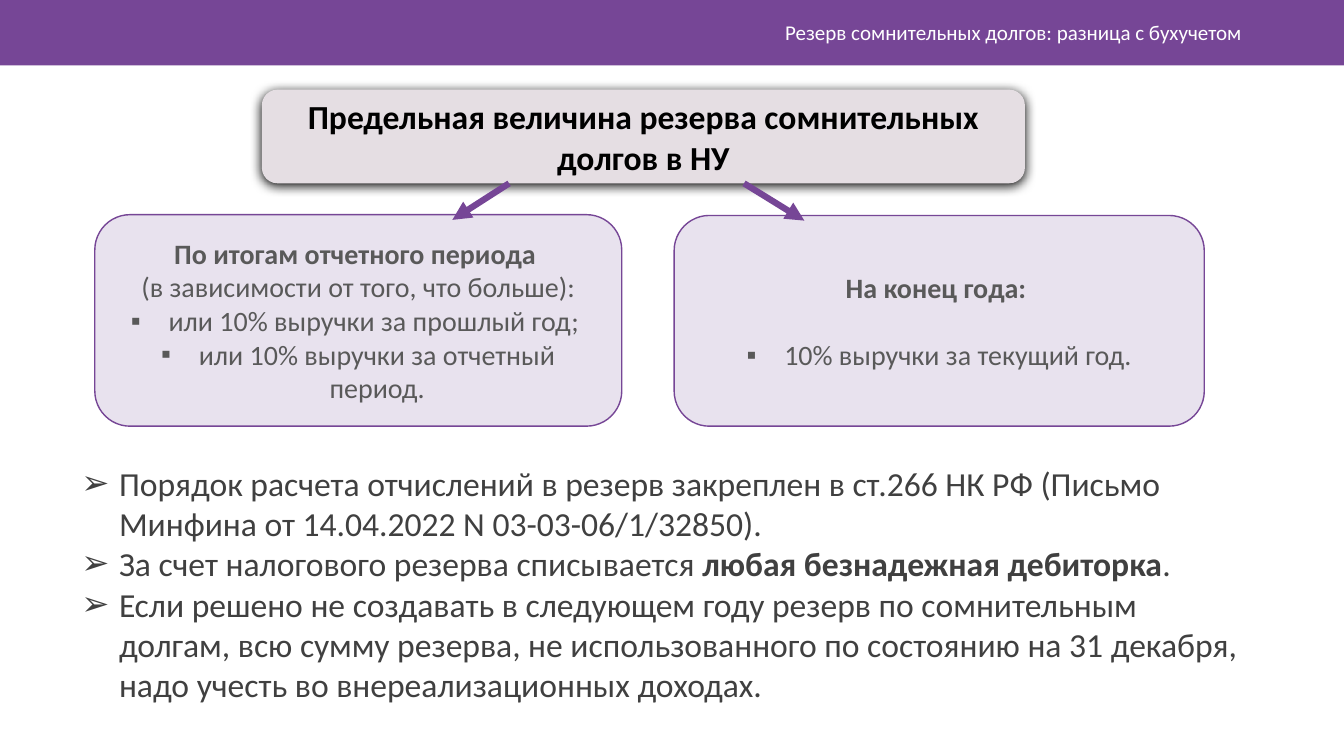
from lxml.etree import SubElement
from pptx import Presentation
from pptx.dml.color import RGBColor
from pptx.enum.shapes import MSO_CONNECTOR as CONN, MSO_SHAPE as SHAPE
from pptx.enum.text import MSO_ANCHOR as ANCHOR, PP_ALIGN as ALIGN
from pptx.oxml.ns import qn
from pptx.util import Cm, Pt

PURPLE = RGBColor(0x76, 0x46, 0x96)
LILAC = RGBColor(0xE8, 0xE2, 0xEE)
PINK_GREY = RGBColor(0xE5, 0xDE, 0xE3)
WHITE = RGBColor(0xFF, 0xFF, 0xFF)
BLACK = RGBColor(0, 0, 0)
DARK_GREY = RGBColor(0x40, 0x40, 0x40)
GREY = RGBColor(0x59, 0x59, 0x59)
INDENT = Cm(0.95)


def add_text(tf, *runs, size, color, align=ALIGN.LEFT, bold=False, bullet=None, before=0):
    """Append a paragraph; every second run has the opposite weight."""
    p = tf.paragraphs[0]
    if p.runs:
        p = tf.add_paragraph()
    p.alignment = align
    if bullet:
        pPr = p._p.get_or_add_pPr()
        pPr.set("marL", str(INDENT))
        pPr.set("indent", str(-INDENT))
        SubElement(pPr, qn("a:buFont"), typeface="Arial")
        SubElement(pPr, qn("a:buChar"), char=bullet)
    if before:
        p.space_before = Pt(before)
    for i, text in enumerate(runs):
        r = p.add_run()
        r.text = text
        r.font.name = "Calibri"
        r.font.size = Pt(size)
        r.font.bold = bold != (i % 2 == 1)
        r.font.color.rgb = color


def add_box(kind, left, top, width, height, fill, line=None):
    sp = s.shapes.add_shape(kind, Cm(left), Cm(top), Cm(width), Cm(height))
    sp.shadow.inherit = False
    sp.fill.solid()
    sp.fill.fore_color.rgb = fill
    if line is None:
        sp.line.fill.background()
    else:
        sp.line.color.rgb = line
        sp.line.width = Pt(1)
    sp.text_frame.word_wrap = True
    sp.text_frame.vertical_anchor = ANCHOR.MIDDLE
    return sp


prs = Presentation()
prs.slide_width, prs.slide_height = Cm(33.87), Cm(19.05)
s = prs.slides.add_slide(prs.slide_layouts[6])

# Header band
add_box(SHAPE.RECTANGLE, 0, 0, 33.87, 1.65, PURPLE)
header = s.shapes.add_textbox(Cm(9), Cm(0.3), Cm(22.55), Cm(1.02)).text_frame
header.word_wrap = True
header.vertical_anchor = ANCHOR.MIDDLE
add_text(header, "Резерв сомнительных долгов: разница с бухучетом",
         size=15, color=WHITE, align=ALIGN.RIGHT)

# Rules of the reserve
rules = s.shapes.add_textbox(Cm(1.8), Cm(11.53), Cm(29.75), Cm(6.4)).text_frame
rules.word_wrap = True
for runs in (
    ["Порядок расчета отчислений в резерв закреплен в ст.266 НК РФ "
     "(Письмо Минфина от 14.04.2022 N 03-03-06/1/32850)."],
    ["За счет налогового резерва списывается ", "любая безнадежная дебиторка", "."],
    ["Если решено не создавать в следующем году резерв по сомнительным долгам, "
     "всю сумму резерва, не использованного по состоянию на 31 декабря, "
     "надо учесть во внереализационных доходах."],
):
    add_text(rules, *runs, size=24, color=DARK_GREY, bullet="➢")

# Title box with a soft shadow
title = add_box(SHAPE.ROUNDED_RECTANGLE, 6.6, 2.26, 19.23, 2.36, PINK_GREY)
effects = title._element.spPr.find(qn("a:effectLst"))
shadow = SubElement(effects, qn("a:outerShdw"), blurRad=str(Pt(8.5)),
                    dist=str(Pt(1)), dir="5400000", rotWithShape="0")
SubElement(shadow, qn("a:srgbClr"), val=str(BLACK))
add_text(title.text_frame, "Предельная величина резерва сомнительных долгов в НУ",
         size=24, color=BLACK, align=ALIGN.CENTER, bold=True)

# The two limits
body = dict(size=20, color=GREY, align=ALIGN.CENTER)
period = add_box(SHAPE.ROUNDED_RECTANGLE, 2.39, 5.41, 13.28, 5.33, LILAC, PURPLE).text_frame
add_text(period, "По итогам отчетного периода ", bold=True, **body)
add_text(period, "(в зависимости от того, что больше):", **body)
add_text(period, "или 10% выручки за прошлый год; ", bullet="▪", **body)
add_text(period, "или 10% выручки за отчетный период.", bullet="▪", **body)

year = add_box(SHAPE.ROUNDED_RECTANGLE, 16.99, 5.43, 13.36, 5.31, LILAC, PURPLE).text_frame
add_text(year, "На конец года: ", bold=True, **body)
add_text(year, "10% выручки за текущий год.", bullet="▪", before=24, **body)

# Arrows from the title to the limits
for x1, x2, y2 in ((12.83, 11.4, 5.54), (18.75, 20.27, 5.56)):
    arrow = s.shapes.add_connector(CONN.STRAIGHT, Cm(x1), Cm(4.62), Cm(x2), Cm(y2))
    arrow.line.color.rgb = PURPLE
    arrow.line.width = Pt(4.5)
    SubElement(arrow.line._get_or_add_ln(), qn("a:tailEnd"), type="triangle")
    SubElement(arrow._element.spPr, qn("a:effectLst"))

prs.save("out.pptx")
